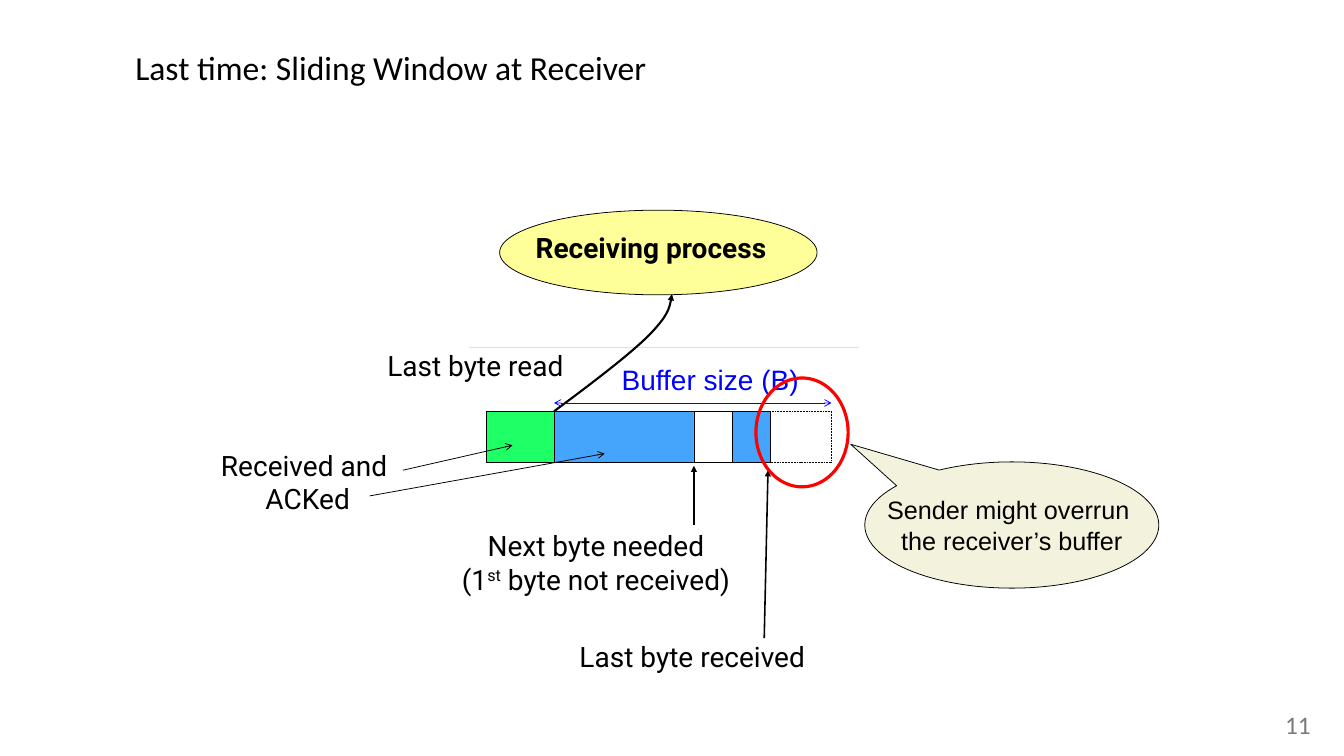
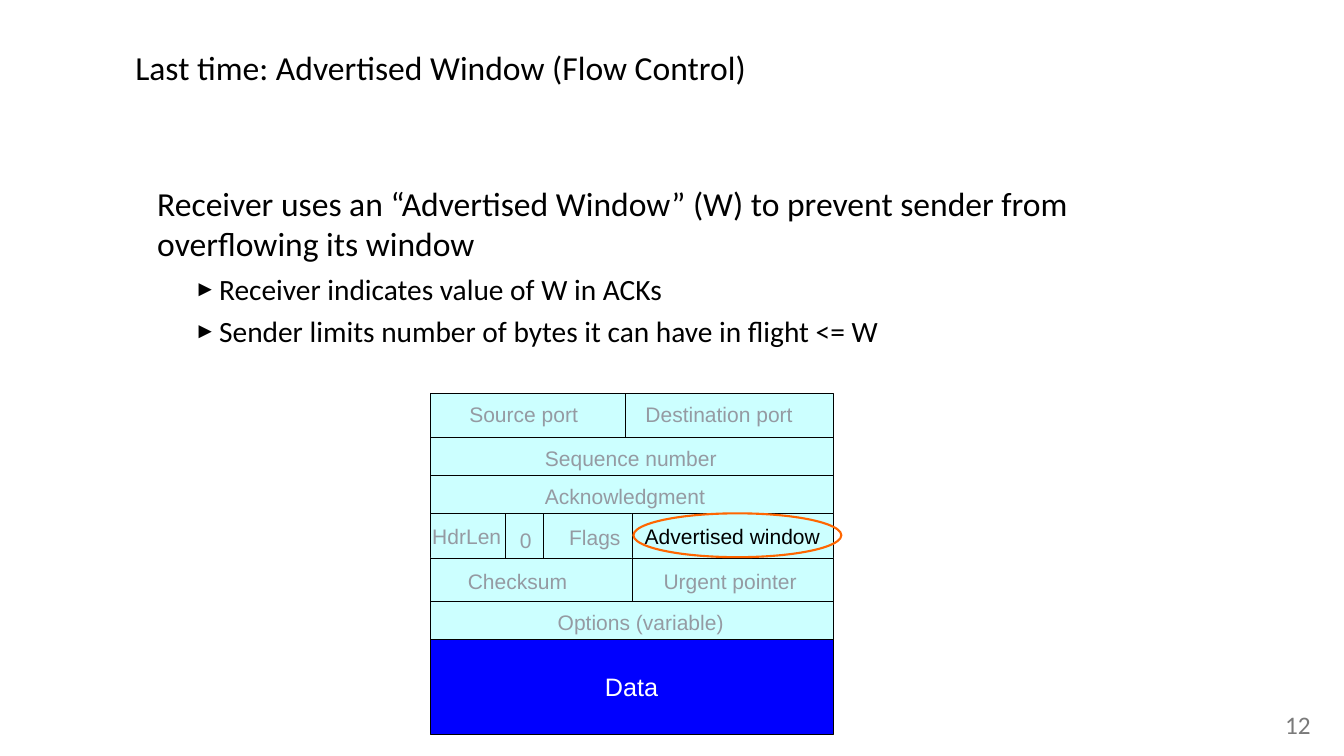
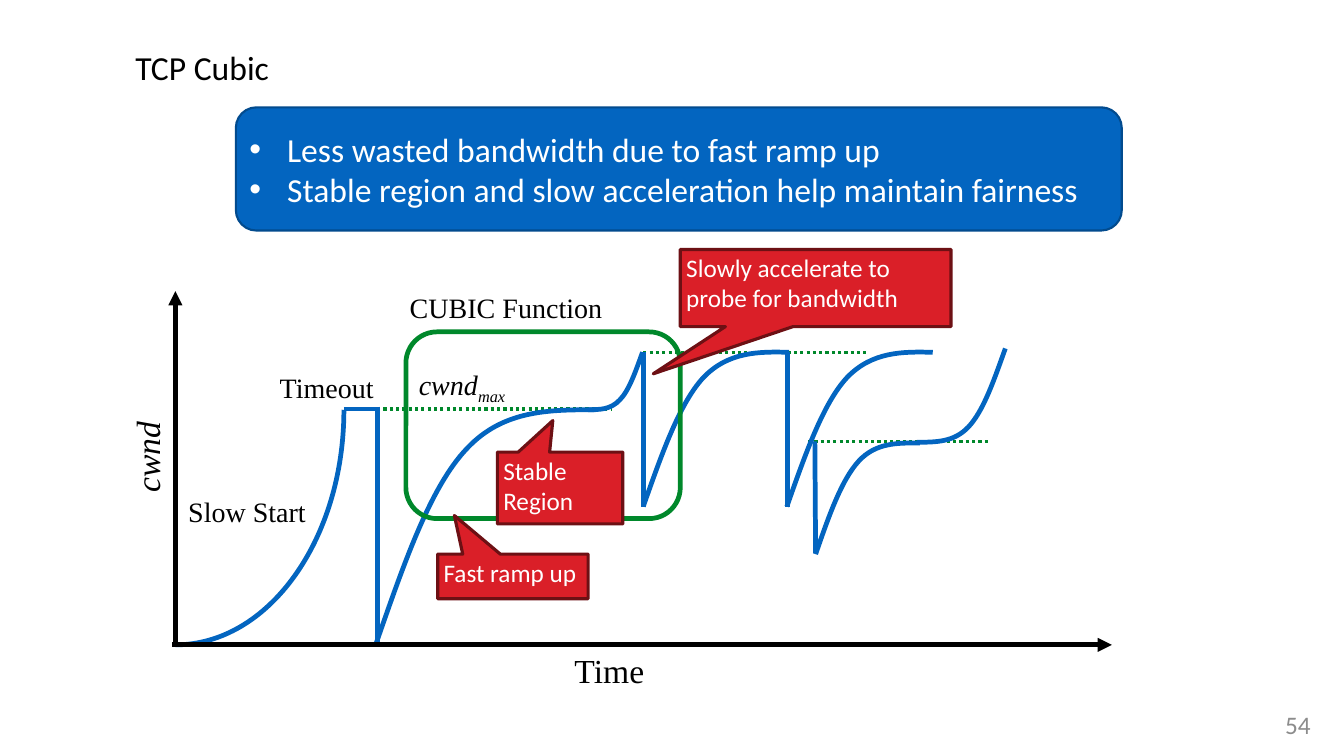
from lxml import etree
from pptx import Presentation
from pptx.dml.color import RGBColor
from pptx.enum.dml import MSO_LINE
from pptx.enum.shapes import MSO_CONNECTOR, MSO_SHAPE
from pptx.enum.text import MSO_ANCHOR, MSO_AUTO_SIZE, PP_ALIGN
from pptx.oxml.ns import qn
from pptx.util import Cm, Pt

RECT, OVAL, ROUND = MSO_SHAPE.RECTANGLE, MSO_SHAPE.OVAL, MSO_SHAPE.ROUNDED_RECTANGLE
OVAL_CALLOUT, RECT_CALLOUT = MSO_SHAPE.OVAL_CALLOUT, MSO_SHAPE.RECTANGULAR_CALLOUT
STRAIGHT, DOTTED = MSO_CONNECTOR.STRAIGHT, MSO_LINE.ROUND_DOT
LEFT, CENTER, RIGHT = PP_ALIGN.LEFT, PP_ALIGN.CENTER, PP_ALIGN.RIGHT
TOP, MIDDLE = MSO_ANCHOR.TOP, MSO_ANCHOR.MIDDLE
FIT, NO_FIT = MSO_AUTO_SIZE.SHAPE_TO_FIT_TEXT, MSO_AUTO_SIZE.NONE

BLACK, WHITE = RGBColor(0, 0, 0), RGBColor(255, 255, 255)
YELLOW, GREEN = RGBColor(0xFF, 0xFF, 0x99), RGBColor(0x1F, 0xFF, 0x66)
SKY, BLUE = RGBColor(0x45, 0xA4, 0xFC), RGBColor(0, 0, 0xFF)
RED, ORANGE = RGBColor(0xFF, 0, 0), RGBColor(0xFF, 0x66, 0)
CREAM, PALE_CYAN = RGBColor(0xF3, 0xF3, 0xDD), RGBColor(0xCC, 0xFF, 0xFF)
RULE_GRAY, LABEL_GRAY = RGBColor(0xDC, 0xDE, 0xE0), RGBColor(0x95, 0x9A, 0xA2)
NUMBER_GRAY, LIGHT_NUMBER = RGBColor(0x7A, 0x7A, 0x7A), RGBColor(0x8C, 0x8C, 0x8C)
CURVE_BLUE, PANEL_EDGE = RGBColor(0x03, 0x65, 0xC0), RGBColor(0x02, 0x4B, 0x8E)
DARK_GREEN = RGBColor(0, 0x88, 0x2B)
CALLOUT_RED, CALLOUT_EDGE = RGBColor(0xDA, 0x1F, 0x28), RGBColor(0x6D, 0x10, 0x14)

# Content. Positions are in inches: left, top, width, height.
TITLES = [
    ("Last time: Sliding Window at Receiver", "11", NUMBER_GRAY),
    ("Last time: Advertised Window (Flow Control)", "12", NUMBER_GRAY),
    ("TCP Cubic", "54", LIGHT_NUMBER),
]

BUFFER_TOP, BUFFER_HEIGHT = 5.44, 0.68
BUFFER_CELLS = [  # left, width, fill, dash
    (6.44, 0.9, GREEN, None), (7.33, 1.86, SKY, None), (9.18, 0.51, WHITE, None),
    (9.69, 0.5, SKY, None), (10.19, 0.81, None, DOTTED),
]
RECEIVER_LABELS = [
    ((5.98, 6.94, 3.81, 1),
     ["Next byte needed\n(1", ("st", {"baseline": 30}), " byte not received)"]),
    ((5, 4.56, 2.58, 0.55), ["Last byte read"]),
    ((7.54, 8.41, 3.24, 0.55), ["Last byte received"]),
    ((2.77, 5.88, 2.6, 1), ["Received and \nACKed"]),
]
RECEIVER_ARROWS = [  # start, end, width, arrowhead
    ((9.18, 6.95), (9.18, 6.16), 1.5, "triangle"),
    ((10.11, 8.44), (10.16, 6.22), 1.5, "triangle"),
    ((5.33, 6.22), (6.78, 5.89), 0.75, "arrow"),
    ((4.89, 6.56), (8, 6), 0.75, "arrow"),
]
READ_CURVE = [(7.33, 5.44), (7.83, 5.07), (8.33, 4.69), (8.59, 4.43),
              (8.84, 4.17), (8.87, 4.03), (8.89, 3.89)]

WINDOW_POINT = ("Receiver uses an “Advertised Window” (W) to prevent sender "
                "from overflowing its window")
WINDOW_SUBPOINTS = ["Receiver indicates value of W in ACKs",
                    "Sender limits number of bytes it can have in flight <= W"]
HEADER_LEFT, HEADER_TOP, HEADER_WIDTH = 5.69, 5.21, 5.33
HEADER_ROWS = [  # height, cell widths, labels (text, left, width, offset from row top)
    (0.58, [2.58, 2.75], [("Source port", 6.11, 1.66, 0.05),
                          ("Destination port", 8.44, 2.17, 0.05)]),
    (0.5, [HEADER_WIDTH], [("Sequence number", 7.11, 2.52, 0.05)]),
    (0.5, [HEADER_WIDTH], [("Acknowledgment", 7.11, 2.37, 0.05)]),
    (0.59, [2.67, 2.67], [("HdrLen", 5.62, 1.17, 0.09), ("0", 6.78, 0.36, 0.14),
                          ("Flags", 7.43, 0.89, 0.1),
                          ("Advertised window", 8.43, 2.54, 0.08)]),
    (0.58, [2.67, 2.67], [("Checksum", 6.09, 1.56, 0.09),
                          ("Urgent pointer", 8.68, 2, 0.09)]),
    (0.5, [HEADER_WIDTH], [("Options (variable)", 7.28, 2.46, 0.05)]),
]
FLAG_DIVIDERS, FLAG_TOP, FLAG_BOTTOM = [6.69, 7.19], 6.79, 7.38

BENEFITS = ["Less wasted bandwidth due to fast ramp up",
            "Stable region and slow acceleration help maintain fairness"]
PLOT_LABELS = [  # box, runs, size, rotation
    ((7.47, 8.53, 1.2, 0.67), ["Time"], 32, 0),
    ((1.33, 5.7, 1.22, 0.67), [("cwnd", {"italic": True})], 32, 270),
    ((3.57, 4.83, 1.53, 0.58), ["Timeout"], 26.7, 0),
    ((2.36, 6.47, 1.84, 0.58), ["Slow Start"], 26.7, 0),
    ((5.29, 3.77, 3.8, 0.58), ["CUBIC Function"], 26.7, 0),
    ((5.41, 4.79, 1.48, 0.58),
     [("cwnd", {"italic": True}), ("max", {"italic": True, "baseline": -25})], 26.7, 0),
]
WINDOW_LEVELS = [((4.99, 5.41), (8.1, 5.41)), ((8.51, 4.66), (10.13, 4.66)),
                 ((10.42, 4.66), (11.46, 4.66)), ((10.69, 5.84), (13.09, 5.84))]
WINDOW_DROPS = [((4.55, 5.41), (4.99, 5.41)), ((4.99, 5.38), (4.99, 8.49)),
                ((8.51, 4.66), (8.51, 6.7)), ((10.42, 4.66), (10.42, 6.7)),
                ((10.78, 5.84), (10.79, 7.32))]
REGROWTH = [(0, 0), (0.24, -0.68), (0.48, -1.37), (0.8, -1.71),
            (1.13, -2.05), (1.53, -2.05), (1.93, -2.04)]
WINDOW_CURVES = [
    [(4.55, 5.42), (4.55, 7.14), (3.55, 8.53), (2.32, 8.53)],
    [(4.98, 8.5), (5.34, 7.47), (5.69, 6.44), (6.18, 5.93),
     (6.66, 5.42), (7.27, 5.42), (7.88, 5.42)],
    [(8.5, 4.66), (8.41, 4.91), (8.32, 5.17), (8.2, 5.29),
     (8.08, 5.42), (7.93, 5.42), (7.78, 5.42)],
    *[[(x + dx, 6.7 + dy) for dx, dy in REGROWTH] for x in (8.51, 10.41)],
    [(10.79, 7.33), (10.96, 6.84), (11.13, 6.35), (11.36, 6.1),
     (11.59, 5.85), (11.88, 5.86), (12.17, 5.86)],
    [(13.3, 4.61), (13.15, 5.03), (13.01, 5.44), (12.81, 5.65),
     (12.62, 5.85), (12.38, 5.85), (12.13, 5.85)],
]
CALLOUTS = [  # box, pointer, text width, paragraphs
    ((5.79, 7.33, 1.99, 0.59), (-0.389, -1.366), 2.2, ["Fast ramp up"]),
    ((6.58, 5.98, 1.66, 0.95), (-0.058, -0.939), 1.66, ["Stable", "Region"]),
    ((9, 3.3, 3.58, 1.02), (-0.6, 1.112), 3.58,
     ["Slowly accelerate to probe for bandwidth"]),
]


def inches(*values):
    return [Cm(v * 2.54) for v in values]


def style_line(line, color, width, dash=None, head=None, tail=None):
    line.color.rgb = color
    line.width = Pt(width)
    if dash:
        line.dash_style = dash
    ln = line._get_or_add_ln()
    for tag, end in (("a:headEnd", head), ("a:tailEnd", tail)):
        if end:
            etree.SubElement(ln, qn(tag), type=end)


def add_line(slide, start, end, color, width, **ends):
    c = slide.shapes.add_connector(STRAIGHT, *inches(*start, *end))
    style_line(c.line, color, width, **ends)
    etree.SubElement(c._element.spPr, qn("a:effectLst"))


def add_shape(parent, kind, box, fill=None, edge=BLACK, width=0.75, dash=None, adj=()):
    sp = parent.shapes.add_shape(kind, *inches(*box))
    sp.shadow.inherit = False
    for i, value in enumerate(adj):
        sp.adjustments[i] = value
    if fill is None:
        sp.fill.background()
    else:
        sp.fill.solid()
        sp.fill.fore_color.rgb = fill
    if edge is None:
        sp.line.fill.background()
    else:
        style_line(sp.line, edge, width, dash)
    return sp


def add_curve(slide, points, color, width, tail=None):
    """Draw chained cubic Bezier segments: a start, then three points for each segment."""
    builder = slide.shapes.build_freeform(*inches(*points[0]))
    builder.add_line_segments([inches(*pt) for pt in points[1:]], close=False)
    sp = builder.convert_to_shape()
    steps = list(sp._element.iter(qn("a:lnTo")))
    for k in range(0, len(steps), 3):
        curve = etree.Element(qn("a:cubicBezTo"))
        steps[k].addprevious(curve)
        for step in steps[k:k + 3]:
            curve.append(step[0])
            step.getparent().remove(step)
    sp.shadow.inherit = False
    sp.fill.background()
    style_line(sp.line, color, width, tail=tail)


def fill_paragraph(p, runs, font, size, color, align=LEFT, bold=False):
    p.alignment = align
    for run in runs:
        text, fmt = (run, {}) if isinstance(run, str) else run
        for i, part in enumerate(text.split("\n")):
            if i:
                p.add_line_break()
            r = p.add_run()
            r.text = part
            style = {"name": font, "size": Pt(size), "bold": bold,
                     "italic": fmt.get("italic", False)}
            for key, value in style.items():
                setattr(r.font, key, value)
            r.font.color.rgb = color
            if "baseline" in fmt:
                r._r.get_or_add_rPr().set("baseline", str(fmt["baseline"] * 1000))


def set_text(sp, paragraphs, font, size, color, align=LEFT, bold=False, wrap=False,
             grow=True, anchor=TOP, insets=(0.1, 0.05)):
    """Fill a shape with paragraphs, each a list of runs."""
    tf = sp.text_frame
    x, y = inches(*insets)
    frame = {"word_wrap": wrap, "auto_size": FIT if grow else NO_FIT,
             "vertical_anchor": anchor, "margin_left": x, "margin_right": x,
             "margin_top": y, "margin_bottom": y}
    for key, value in frame.items():
        setattr(tf, key, value)
    for i, runs in enumerate(paragraphs):
        p = tf.add_paragraph() if i else tf.paragraphs[0]
        fill_paragraph(p, runs, font, size, color, align, bold)
    return tf


def add_text(parent, box, paragraphs, font, size, color, **options):
    tb = parent.shapes.add_textbox(*inches(*box))
    set_text(tb, paragraphs, font, size, color, **options)
    return tb


def indent(p, left, first, bullet=None, percent=100):
    pPr = p._p.get_or_add_pPr()
    for key, value in zip(("marL", "indent"), inches(left, first)):
        pPr.set(key, str(value))
    if bullet:
        etree.SubElement(pPr, qn("a:buSzPct"), val=str(percent * 1000))
        etree.SubElement(pPr, qn("a:buFont"), typeface="Arial")
        etree.SubElement(pPr, qn("a:buChar"), char=bullet)


def new_slide(prs, title, number, number_color):
    slide = prs.slides.add_slide(prs.slide_layouts[6])
    add_text(slide, (1.73, 0, 14.31, 1.78), [[title]], "Calibri", 32, BLACK,
             wrap=True, grow=False, anchor=MIDDLE, insets=(0.06, 0.06))
    add_text(slide, (16.94, 9.38, 0.46, 0.5), [[number]], "Calibri", 24, number_color,
             align=CENTER, insets=(0, 0))
    return slide


def draw_receiver(slide):
    add_shape(slide, OVAL, (6.61, 2.78, 4.2, 1.12), YELLOW)
    add_text(slide, (6.86, 3, 3.51, 0.55), [["Receiving process"]], "Roboto", 26.7, BLACK,
             align=CENTER, bold=True)
    add_line(slide, (6.21, 4.59), (11.36, 4.59), RULE_GRAY, 0.75)
    for left, width, fill, dash in BUFFER_CELLS:
        add_shape(slide, RECT, (left, BUFFER_TOP, width, BUFFER_HEIGHT), fill, dash=dash)
    add_curve(slide, READ_CURVE, BLACK, 2, tail="triangle")
    for box, runs in RECEIVER_LABELS:
        add_text(slide, box, [runs], "Roboto", 26.7, BLACK, align=CENTER)
    for start, end, width, tail in RECEIVER_ARROWS:
        add_line(slide, start, end, BLACK, width, tail=tail)
    add_text(slide, (8.11, 4.75, 2.56, 0.55), [["Buffer size (B)"]], "Arial", 26.7, BLUE,
             align=RIGHT)
    add_line(slide, (7.33, 5.33), (11, 5.33), BLUE, 0.75, head="arrow", tail="arrow")
    add_shape(slide, OVAL, (10, 5, 1.22, 1.44), edge=RED, width=3)
    warning = add_shape(slide, OVAL_CALLOUT, (11.44, 6.11, 3.89, 1.67), CREAM,
                        adj=(-0.548, -0.64))
    set_text(warning, [["Sender might overrun \nthe receiver’s buffer"]], "Arial", 24, BLACK,
             align=CENTER, grow=False, anchor=MIDDLE, insets=(0.13, 0.07))


def draw_advertised_window(slide):
    body = add_text(slide, (1.73, 1.79, 14.31, 6.9), [[WINDOW_POINT]], "Calibri", 32, BLACK,
                    wrap=True, grow=False, insets=(0, 0))
    body.text_frame.margin_top = Cm(1.6)
    indent(body.text_frame.paragraphs[0], 0.35, 0)
    for text in WINDOW_SUBPOINTS:
        p = body.text_frame.add_paragraph()
        fill_paragraph(p, [text], "Calibri", 28, BLACK)
        p.level = 1
        p.space_before = Pt(7)
        indent(p, 1.17, -0.33, "►", 75)

    top = HEADER_TOP
    for height, widths, labels in HEADER_ROWS:
        left = HEADER_LEFT
        for width in widths:
            add_shape(slide, RECT, (left, top, width, height), PALE_CYAN)
            left += width
        for text, x, width, dy in labels:
            color = BLACK if text == "Advertised window" else LABEL_GRAY
            box = (x, top + dy, width, 0.43)
            if text == "HdrLen":
                add_text(slide, box, [[text]], "Arial", 20, color, wrap=True)
            else:
                label = add_shape(slide, RECT, box, PALE_CYAN, edge=None)
                set_text(label, [[text]], "Arial", 20, color)
        top += height
    for x in FLAG_DIVIDERS:
        add_line(slide, (x, FLAG_TOP), (x, FLAG_BOTTOM), BLACK, 0.75)
    data = add_shape(slide, RECT, (HEADER_LEFT, top, HEADER_WIDTH, 1.25), BLUE)
    set_text(data, [["Data"]], "Arial", 24, WHITE, align=CENTER, grow=False, anchor=MIDDLE)
    add_shape(slide, OVAL, (8.38, FLAG_TOP, 2.75, 0.58), edge=ORANGE, width=2)


def draw_cubic(slide):
    for start, end in WINDOW_LEVELS:
        add_line(slide, start, end, DARK_GREEN, 3, dash=DOTTED)
    for box, runs, size, rotation in PLOT_LABELS:
        label = add_text(slide, box, [runs], "Times New Roman", size, BLACK,
                         insets=(0.13, 0.07))
        label.rotation = rotation
    for points in WINDOW_CURVES:
        add_curve(slide, points, CURVE_BLUE, 4.5)
    for start, end in WINDOW_DROPS:
        add_line(slide, start, end, CURVE_BLUE, 4.5)
    add_line(slide, (2.32, 3.85), (2.32, 8.53), BLACK, 4.5, head="triangle")
    add_line(slide, (2.28, 8.53), (14.71, 8.53), BLACK, 4.5, tail="triangle")
    add_shape(slide, ROUND, (5.37, 4.39, 3.63, 2.47), edge=DARK_GREEN, width=4.5)
    for box, pointer, width, lines in CALLOUTS:
        group = slide.shapes.add_group_shape()
        add_shape(group, RECT_CALLOUT, box, CALLOUT_RED, CALLOUT_EDGE, 3, adj=pointer)
        left, top, _, height = box
        add_text(group, (left - 0.02, top - 0.01, width, height - 0.09),
                 [[line] for line in lines], "Calibri", 24, WHITE, wrap=True)
    panel = add_shape(slide, ROUND, (3.12, 1.42, 11.72, 1.63), CURVE_BLUE, PANEL_EDGE, 2)
    tf = set_text(panel, [[text] for text in BENEFITS], "Calibri", 32, WHITE,
                  wrap=True, grow=False, anchor=MIDDLE)
    for p in tf.paragraphs:
        indent(p, 0.5, -0.5, "•")


def main():
    prs = Presentation()
    prs.slide_width, prs.slide_height = inches(17.78, 10)
    for heading, draw in zip(TITLES, (draw_receiver, draw_advertised_window, draw_cubic)):
        draw(new_slide(prs, *heading))
    prs.save("out.pptx")


if __name__ == "__main__":
    main()
